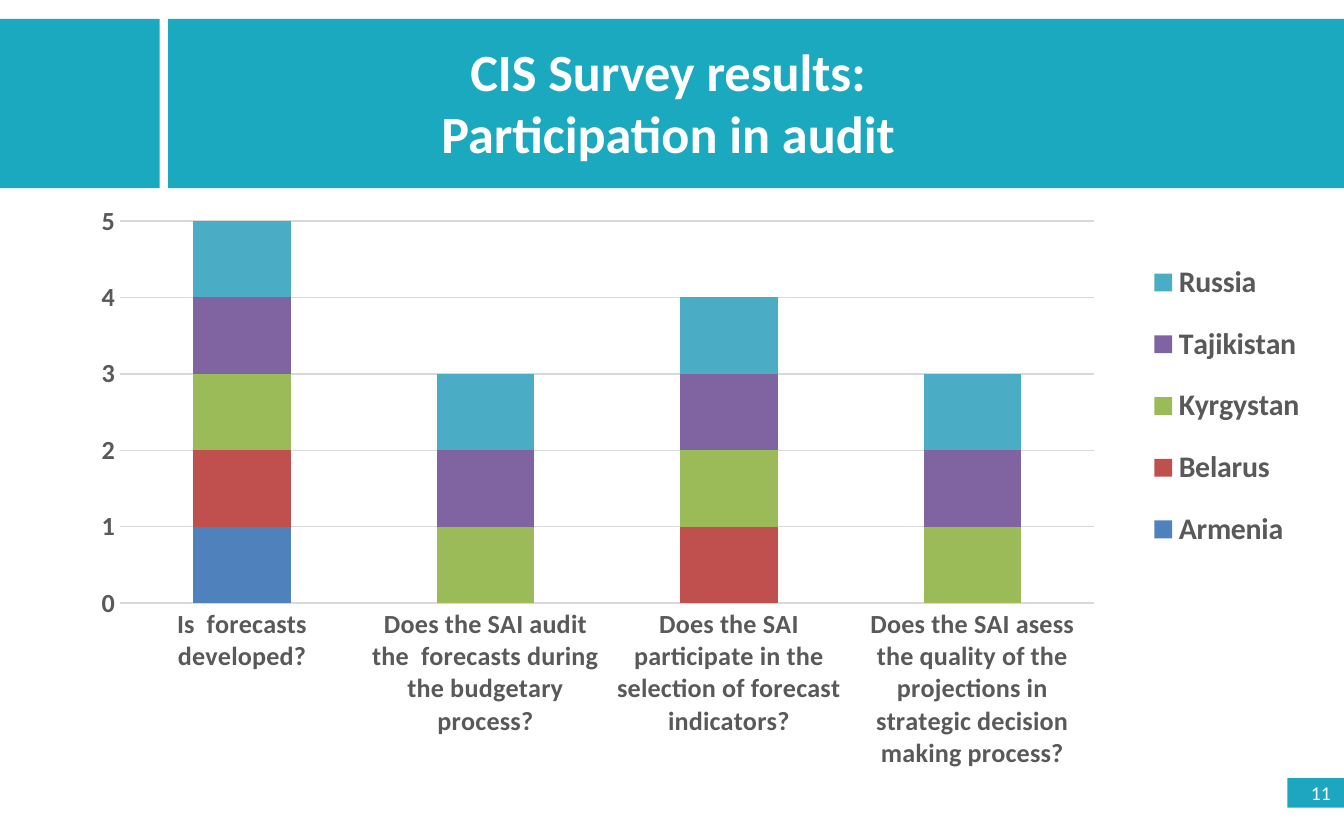
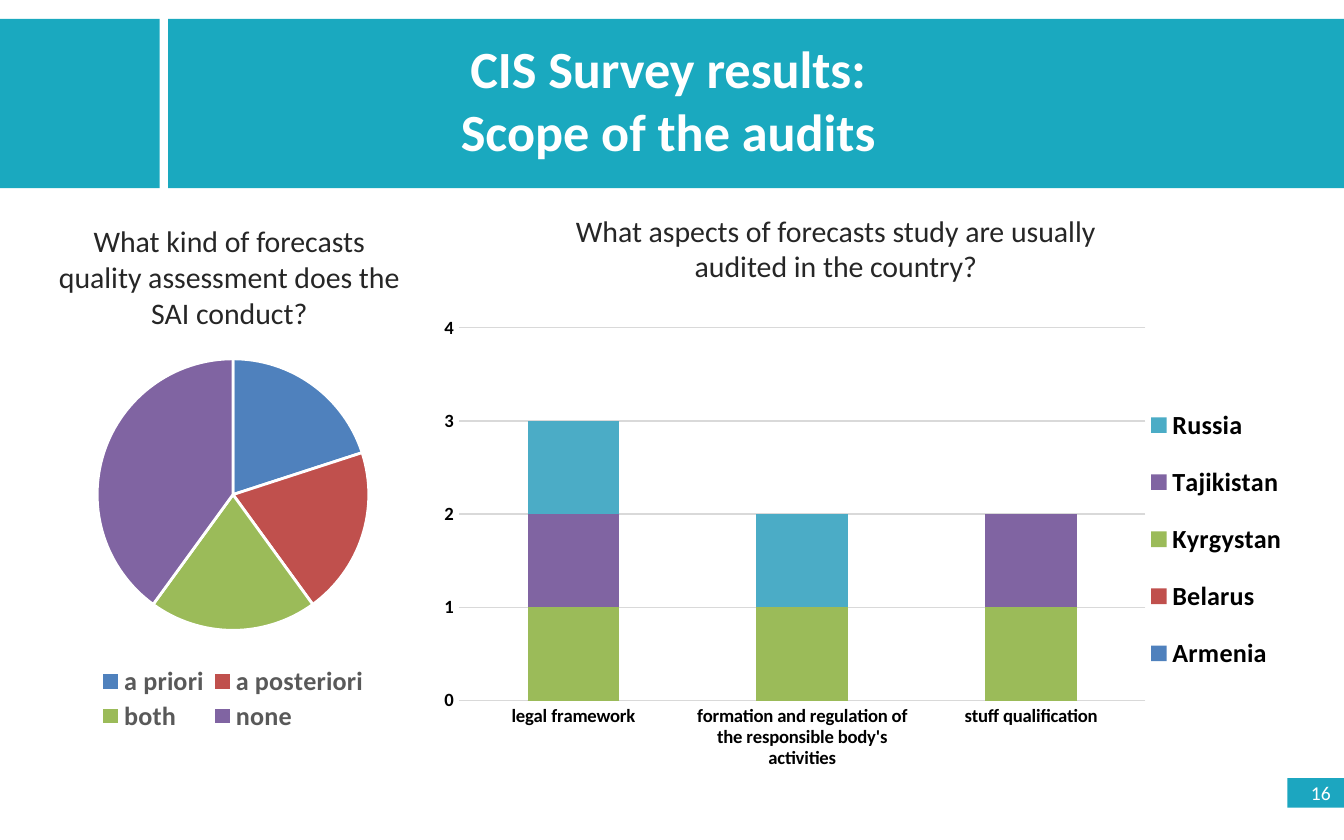
from pptx import Presentation
from pptx.chart.data import CategoryChartData
from pptx.dml.color import RGBColor
from pptx.enum.chart import XL_CHART_TYPE as ChartType
from pptx.enum.chart import XL_LEGEND_POSITION as LegendPosition
from pptx.enum.chart import XL_TICK_MARK as TickMark
from pptx.enum.shapes import MSO_SHAPE
from pptx.enum.text import MSO_ANCHOR, MSO_AUTO_SIZE, PP_ALIGN
from pptx.oxml import parse_xml
from pptx.oxml.ns import nsdecls
from pptx.util import Cm, Pt

# Colours and text formats
TEAL = RGBColor(0x1A, 0xA9, 0xBF)
NUMBER_TEAL = RGBColor(0x1C, 0xA6, 0xC0)
WHITE = RGBColor(0xFF, 0xFF, 0xFF)
BLACK = RGBColor(0x00, 0x00, 0x00)
DARK = RGBColor(0x26, 0x26, 0x26)
GREY = RGBColor(0x59, 0x59, 0x59)
GRID = RGBColor(0xD9, 0xD9, 0xD9)
BLUE = RGBColor(0x4F, 0x81, 0xBD)
RED = RGBColor(0xC0, 0x50, 0x4D)
GREEN = RGBColor(0x9B, 0xBB, 0x59)
PURPLE = RGBColor(0x80, 0x64, 0xA2)
AQUA = RGBColor(0x4B, 0xAC, 0xC6)
PALETTE = [BLUE, RED, GREEN, PURPLE, AQUA]
COUNTRIES = ["Armenia", "Belarus", "Kyrgystan", "Tajikistan", "Russia"]

TITLE = {"size": Pt(28), "bold": True, "color": WHITE}
QUESTION = {"size": Pt(16), "bold": False, "color": DARK}
NUMBER = {"size": Pt(10.5), "bold": False, "color": WHITE}


def set_font(font, style):
    for name, value in {"name": "Calibri", **style}.items():
        if name == "color":
            font.color.rgb = value
        else:
            setattr(font, name, value)


def place_chart(page, kind, place, data, plot_area, legend_area, legend_style):
    chart = page.shapes.add_chart(kind, *map(Cm, place), data).chart
    chart.has_title = False
    set_font(chart.font, {"size": Pt(10), "color": BLACK})
    chart.has_legend = True
    legend = chart.legend
    is_pie = kind == ChartType.PIE
    legend.position = LegendPosition.BOTTOM if is_pie else LegendPosition.RIGHT
    legend.include_in_layout = False
    set_font(legend.font, legend_style)

    # Fixed places for the plot and the legend, as fractions of the chart
    layouts = []
    for area, target in ((plot_area, '<c:layoutTarget val="inner"/>'), (legend_area, "")):
        sizes = "".join(f'<c:{tag} val="{value}"/>' for tag, value in zip("xywh", area))
        layouts.append(parse_xml(
            f'<c:layout {nsdecls("c")}><c:manualLayout>{target}'
            f'<c:xMode val="edge"/><c:yMode val="edge"/>{sizes}'
            "</c:manualLayout></c:layout>"))
    plot_element = chart.element.xpath("c:chart/c:plotArea")[0] if hasattr(chart, "element") \
        else chart._chartSpace.xpath("c:chart/c:plotArea")[0]
    for old in plot_element.xpath("c:layout"):
        plot_element.remove(old)
    plot_element.insert(0, layouts[0])
    plot_element.getparent().xpath("c:legend/c:legendPos")[0].addnext(layouts[1])
    return chart


deck = Presentation()
deck.slide_width, deck.slide_height = Cm(25.4), Cm(15.88)

pages = [
    {
        "number": "11", "topic": "Participation in audit", "title_top": 0.61,
        "questions": [],
        "place": (1.32, 3.73, 23.9, 11.28),
        "plot": (0.04, 0.04, 0.77, 0.64), "legend": (0.85, 0.07, 0.13, 0.56),
        "axis_style": {"size": Pt(14), "bold": True, "color": GREY},
        "legend_style": {"size": Pt(16), "bold": True, "color": GREY},
        "maximum": 5,
        "categories": [
            "Is  forecasts developed?",
            "Does the SAI audit the  forecasts during the budgetary process?",
            "Does the SAI participate in the selection of forecast indicators?",
            "Does the SAI asess the quality of the projections in strategic "
            "decision making process?",
        ],
        "answers": [(1, 0, 0, 0), (1, 0, 1, 0)] + [(1, 1, 1, 1)] * 3,
    },
    {
        "number": "16", "topic": "Scope of the audits", "title_top": 0.56,
        "questions": [
            ("What kind of forecasts quality assessment does the SAI conduct?",
             (0.84, 4.09, 6.99, 2.31)),
            ("What aspects of forecasts study are usually audited in the country?",
             (9.73, 3.89, 12.14, 1.63)),
        ],
        "place": (8.08, 5.84, 16.94, 8.89),
        "plot": (0.035, 0.04, 0.766, 0.793), "legend": (0.8, 0.16, 0.16, 0.66),
        "axis_style": {"size": Pt(10), "bold": True, "color": BLACK},
        "legend_style": {"size": Pt(14), "bold": True, "color": BLACK},
        "maximum": 4,
        "categories": [
            "legal framework",
            "formation and regulation of the responsible body's activities",
            "stuff qualification",
        ],
        "answers": [(0, 0, 0), (0, 0, 0), (1, 1, 1), (1, 0, 1), (1, 1, 0)],
    },
]

for content in pages:
    page = deck.slides.add_slide(deck.slide_layouts[6])

    # Header bands and number tab
    for place, colour in (
        ((3.18, 0.36, 22.22, 3.2), TEAL),
        ((0, 0.36, 3.02, 3.2), TEAL),
        ((24.33, 14.71, 1.07, 0.56), NUMBER_TEAL),
    ):
        band = page.shapes.add_shape(MSO_SHAPE.RECTANGLE, *map(Cm, place))
        band.shadow.inherit = False
        band.fill.solid()
        band.fill.fore_color.rgb = colour
        band.line.fill.background()
    band.text_frame.vertical_anchor = MSO_ANCHOR.MIDDLE
    para = band.text_frame.paragraphs[0]
    para.alignment = PP_ALIGN.RIGHT
    span = para.add_run()
    span.text = content["number"]
    set_font(span.font, NUMBER)

    # Stacked columns, one series per country
    data = CategoryChartData()
    data.categories = content["categories"]
    for country, answers in zip(COUNTRIES, content["answers"]):
        data.add_series(country, answers)
    chart = place_chart(page, ChartType.COLUMN_STACKED, content["place"], data,
                        content["plot"], content["legend"], content["legend_style"])
    columns = chart.plots[0]
    columns.gap_width, columns.overlap = 150, 100
    columns.vary_by_categories = False
    for series, colour in zip(columns.series, PALETTE):
        series.format.fill.solid()
        series.format.fill.fore_color.rgb = colour
    for axis in (chart.category_axis, chart.value_axis):
        axis.major_tick_mark = axis.minor_tick_mark = TickMark.NONE
        set_font(axis.tick_labels.font, content["axis_style"])
    values = chart.value_axis
    values.minimum_scale, values.maximum_scale = 0, content["maximum"]
    values.major_unit = 1
    values.has_major_gridlines = True
    values.format.line.fill.background()
    for line in (chart.category_axis.format.line, values.major_gridlines.format.line):
        line.color.rgb = GRID
        line.width = Pt(0.75)

    # Title and questions
    title = ["CIS Survey results:", content["topic"]]
    texts = [(title, (3.38, content["title_top"], 18.49, 2.64), TITLE)]
    texts += [([question], place, QUESTION) for question, place in content["questions"]]
    for lines, place, style in texts:
        box = page.shapes.add_textbox(*map(Cm, place))
        frame = box.text_frame
        frame.word_wrap = True
        frame.auto_size = MSO_AUTO_SIZE.SHAPE_TO_FIT_TEXT
        for index, text in enumerate(lines):
            para = frame.add_paragraph() if index else frame.paragraphs[0]
            para.alignment = PP_ALIGN.CENTER
            span = para.add_run()
            span.text = text
            set_font(span.font, style)

# Pie of assessment kinds on the last page
data = CategoryChartData()
data.categories = ["a priori", "a posteriori", "both", "none"]
data.add_series("Series 1", (20, 20, 20, 40))
chart = place_chart(page, ChartType.PIE, (-0.18, 6.4, 9.17, 7.57), data,
                    (0.22, 0.05, 0.56, 0.68), (0.21, 0.81, 0.58, 0.18),
                    {"size": Pt(14), "bold": True, "color": GREY})
pie = chart.plots[0]
pie.vary_by_categories = True
for index, colour in enumerate(PALETTE[:4]):
    slice_format = pie.series[0].points[index].format
    slice_format.fill.solid()
    slice_format.fill.fore_color.rgb = colour
    slice_format.line.color.rgb = WHITE
    slice_format.line.width = Pt(1.5)

deck.save("out.pptx")
